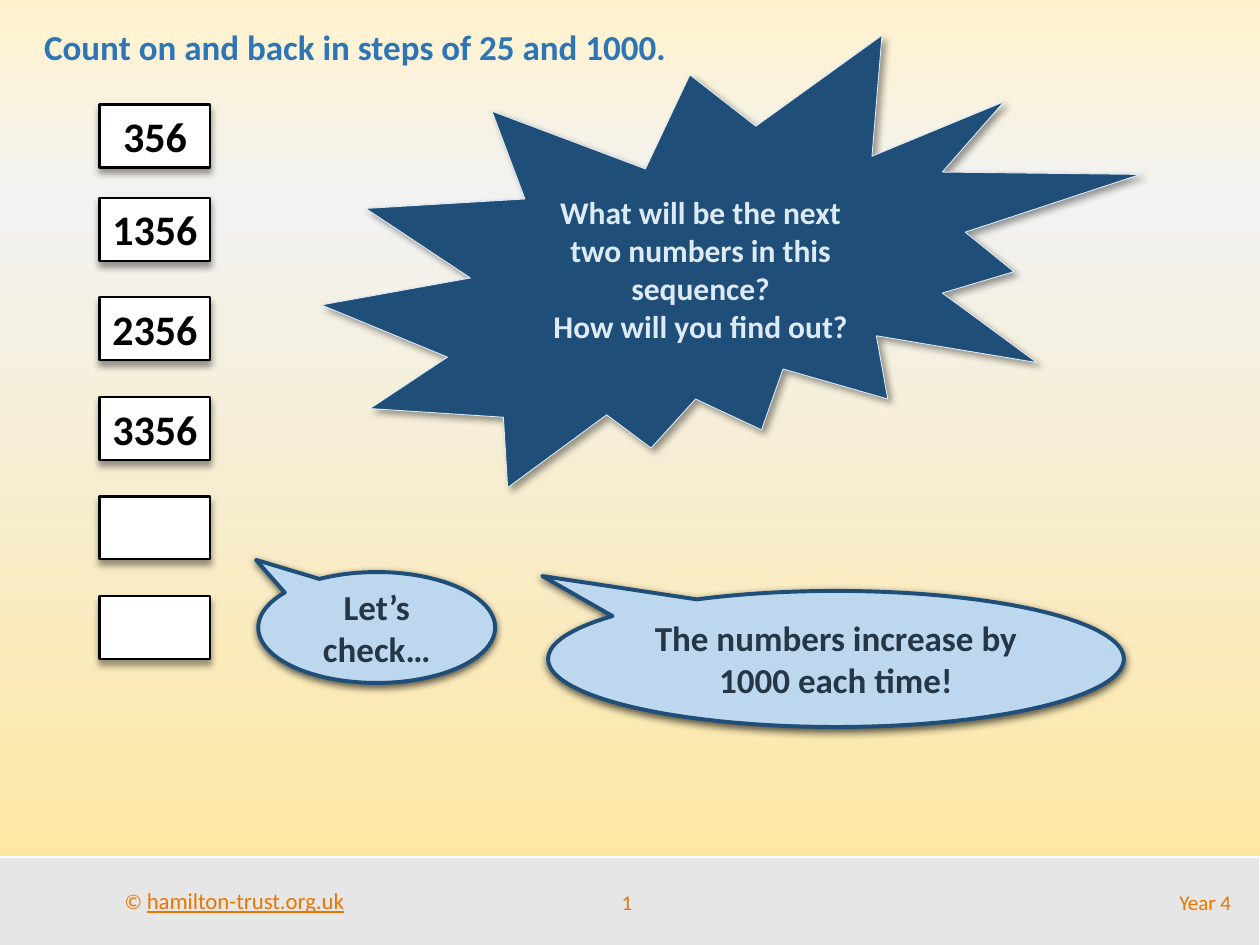
"""Build a counting-sequence slide with number boxes, a question burst and speech bubbles."""
from lxml import etree
from pptx import Presentation
from pptx.dml.color import RGBColor
from pptx.enum.shapes import MSO_SHAPE
from pptx.enum.text import MSO_ANCHOR, PP_ALIGN
from pptx.oxml import parse_xml
from pptx.oxml.ns import nsdecls, qn
from pptx.util import Inches, Pt

RECTANGLE = MSO_SHAPE.RECTANGLE
BURST = MSO_SHAPE.EXPLOSION2
BUBBLE = MSO_SHAPE.OVAL_CALLOUT
LEFT, CENTER, RIGHT = PP_ALIGN.LEFT, PP_ALIGN.CENTER, PP_ALIGN.RIGHT
TOP, MIDDLE = MSO_ANCHOR.TOP, MSO_ANCHOR.MIDDLE

FONT = "Calibri"
COLORS = {
    "title": "2E75B6", "navy": "1F4E79", "pale": "DEEBF7", "sky": "BDD7EE",
    "ink": "253746", "orange": "EA7600", "grey": "E7E6E6",
    "white": "FFFFFF", "black": "000000",
}
BACKGROUND = [(0, "FFF2CC"), (21, "F2F2F2"), (100, "FFE699")]

TITLE = "Count on and back in steps of 25 and 1000."
SEQUENCE = ["356", "1356", "2356", "3356", "", ""]
QUESTION = "What will be the next two numbers in this sequence?\nHow will you find out?"
BUBBLES = [
    ("Let’s\ncheck…", (2.05, 4.54, 1.88, 0.88)),
    ("The numbers increase by 1000 each time!", (4.35, 4.69, 4.57, 1.08)),
]
FOOTER = [
    (["© ", "hamilton-trust.org.uk"], (0.89, 6.99, 1.97, 0.32), LEFT, TOP),
    (["1"], (4.58, 6.96, 0.79, 0.4), CENTER, MIDDLE),
    (["Year 4"], (5.8, 6.96, 4.07, 0.4), RIGHT, MIDDLE),
]
FIRST_TOP, SECOND_TOP, ROW_STEP = 0.83, 1.57, 0.79


def color(name):
    return RGBColor.from_string(COLORS[name])


def style_text(frame, size, ink, bold, align, anchor):
    frame.vertical_anchor = anchor
    for para in frame.paragraphs:
        para.alignment = align
        for span in para.runs:
            span.font.name, span.font.size, span.font.bold = FONT, Pt(size), bold
            span.font.color.rgb = color(ink)


def add_shadow(shape, opacity, blur, distance, angle):
    effects = shape._element.spPr.find(qn("a:effectLst"))
    shadow = etree.SubElement(
        effects, qn("a:outerShdw"), blurRad=str(Pt(blur)), dist=str(Pt(distance)),
        dir=str(angle * 60000), algn="tl", rotWithShape="0")
    tint = etree.SubElement(shadow, qn("a:srgbClr"), val=COLORS["black"])
    etree.SubElement(tint, qn("a:alpha"), val=str(opacity * 1000))


def add_shape(page, kind, place, fill, line, width, shadow=None):
    shape = page.shapes.add_shape(kind, *map(Inches, place))
    shape.shadow.inherit = False
    shape.fill.solid()
    shape.fill.fore_color.rgb = color(fill)
    shape.line.color.rgb = color(line)
    shape.line.width = Pt(width)
    if shadow:
        add_shadow(shape, *shadow)
    return shape


def paint_background(page):
    fill = page.background.fill
    fill.gradient()
    fill.gradient_angle = 270
    stops = page._element.xpath(".//p:bg//a:gsLst")[0]
    for stop in list(stops):
        stops.remove(stop)
    for position, tone in BACKGROUND:
        stops.append(parse_xml(
            f'<a:gs {nsdecls("a")} pos="{position * 1000}"><a:srgbClr val="{tone}"/></a:gs>'))


def add_footer(page):
    add_shape(page, RECTANGLE, (-0.06, 6.8, 10.06, 0.72), "grey", "white", 1)
    for parts, place, align, anchor in FOOTER:
        frame = page.shapes.add_textbox(*map(Inches, place)).text_frame
        frame.word_wrap = len(parts) == 1
        for part in parts:
            frame.paragraphs[0].add_run().text = part
        style_text(frame, 12, "orange", False, align, anchor)
        for span in frame.paragraphs[0].runs[1:]:
            span.font.size = Pt(13)
            span.font.underline = True


def add_title(page):
    title = page.shapes.title
    title.left, title.top, title.width, title.height = map(Inches, (0.25, 0.15, 9.61, 0.44))
    title.text_frame.text = TITLE
    style_text(title.text_frame, 20, "title", True, LEFT, TOP)


def add_sequence(page):
    for row, number in enumerate(SEQUENCE):
        top = SECOND_TOP + (row - 1) * ROW_STEP if row else FIRST_TOP
        box = add_shape(page, RECTANGLE, (0.79, top, 0.88, 0.5),
                        "white", "black", 1.25, (40, 4, 3, 90))
        box.text_frame.word_wrap = False
        box.text_frame.text = number
        style_text(box.text_frame, 24, "black", True, CENTER, TOP)


def add_speech(page):
    burst = add_shape(page, BURST, (2.55, 0.28, 6.5, 3.59),
                      "navy", "pale", 0.5, (40, 4, 3, 45))
    burst.text_frame.text = QUESTION
    style_text(burst.text_frame, 18, "pale", True, CENTER, MIDDLE)
    for words, place in BUBBLES:
        bubble = add_shape(page, BUBBLE, place, "sky", "navy", 2.25, (63, 4.5, 1.5, 90))
        bubble.adjustments[0], bubble.adjustments[1] = -0.51, -0.61
        bubble.text_frame.text = words
        style_text(bubble.text_frame, 20, "ink", True, CENTER, MIDDLE)


def main():
    deck = Presentation()
    deck.slide_width, deck.slide_height = Inches(10), Inches(7.5)
    page = deck.slides.add_slide(deck.slide_layouts.get_by_name("Title Only"))
    paint_background(page)
    add_footer(page)
    add_title(page)
    add_sequence(page)
    add_speech(page)
    deck.save("out.pptx")


if __name__ == "__main__":
    main()
